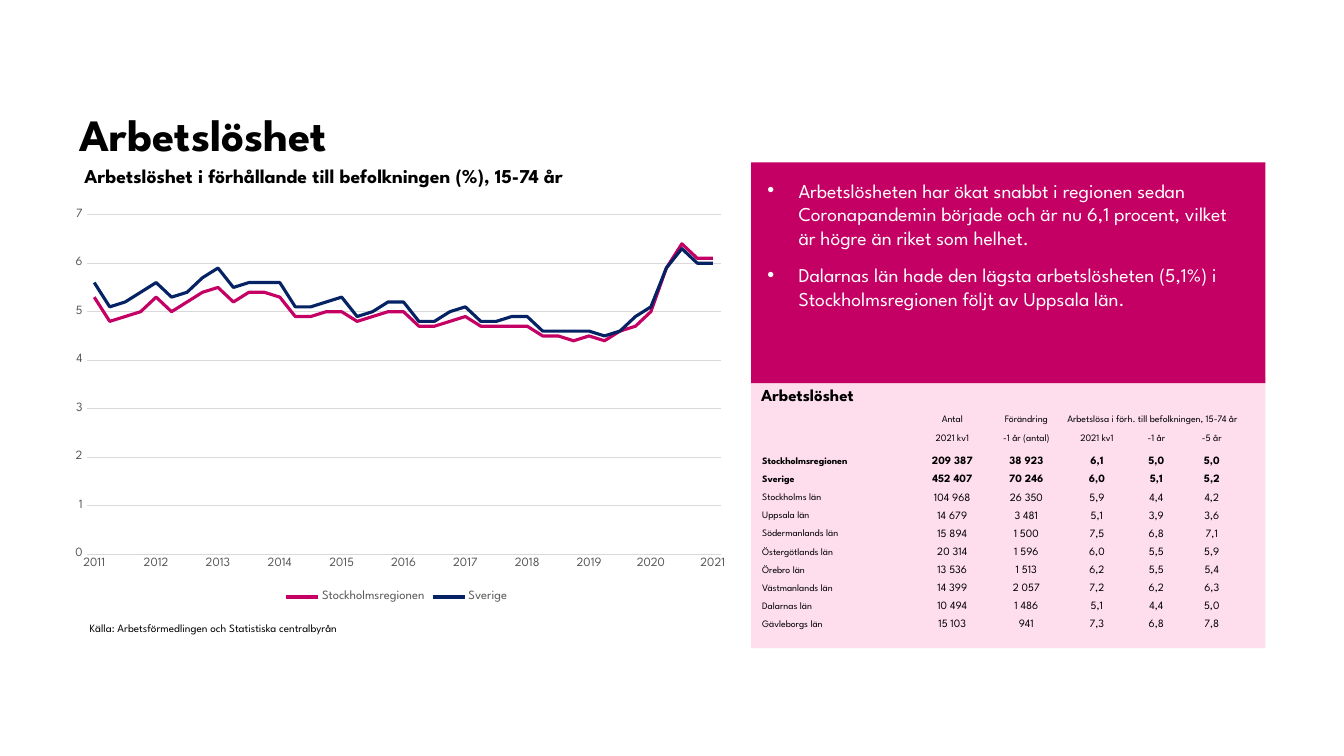
from lxml import etree
from pptx import Presentation
from pptx.chart.data import CategoryChartData
from pptx.dml.color import RGBColor
from pptx.enum.chart import XL_CHART_TYPE, XL_LEGEND_POSITION, XL_TICK_MARK
from pptx.enum.shapes import MSO_SHAPE
from pptx.enum.text import MSO_ANCHOR, MSO_AUTO_SIZE, PP_ALIGN
from pptx.oxml import parse_xml
from pptx.oxml.ns import nsdecls, qn
from pptx.util import Inches, Pt

LINE, LEGEND_BOTTOM, NO_TICK = XL_CHART_TYPE.LINE, XL_LEGEND_POSITION.BOTTOM, XL_TICK_MARK.NONE
RECTANGLE, FIXED_SIZE = MSO_SHAPE.RECTANGLE, MSO_AUTO_SIZE.NONE
TOP, MIDDLE, BOTTOM = MSO_ANCHOR.TOP, MSO_ANCHOR.MIDDLE, MSO_ANCHOR.BOTTOM
LEFT, CENTER = PP_ALIGN.LEFT, PP_ALIGN.CENTER

BLACK = RGBColor(0x00, 0x00, 0x00)
WHITE = RGBColor(0xFF, 0xFF, 0xFF)
MAGENTA = RGBColor(0xC4, 0x00, 0x64)
PINK = RGBColor(0xFE, 0xDE, 0xED)
NAVY = RGBColor(0x05, 0x23, 0x64)
GREY = RGBColor(0x59, 0x59, 0x59)
GRID_GREY = RGBColor(0xD9, 0xD9, 0xD9)
FONT = "League Spartan"
PLAIN_TABLE_STYLE = "{2D5ABB26-0587-4C30-8999-92F81FD0307C}"

BULLETS = [
    "Arbetslösheten har ökat snabbt i regionen sedan Coronapandemin började och är nu "
    "6,1 procent, vilket är högre än riket som helhet.",
    "Dalarnas län hade den lägsta arbetslösheten (5,1%) i Stockholmsregionen följt av Uppsala län.",
]
QUARTERS = [str(2011 + i // 4) if i % 4 == 0 else "" for i in range(41)]
UNEMPLOYMENT = {
    "Stockholmsregionen": (MAGENTA, [
        5.3, 4.8, 4.9, 5, 5.3, 5, 5.2, 5.4, 5.5, 5.2, 5.4, 5.4, 5.3, 4.9, 4.9, 5, 5, 4.8, 4.9, 5, 5,
        4.7, 4.7, 4.8, 4.9, 4.7, 4.7, 4.7, 4.7, 4.5, 4.5, 4.4, 4.5, 4.4, 4.6, 4.7, 5, 5.9, 6.4, 6.1, 6.1]),
    "Sverige": (NAVY, [
        5.6, 5.1, 5.2, 5.4, 5.6, 5.3, 5.4, 5.7, 5.9, 5.5, 5.6, 5.6, 5.6, 5.1, 5.1, 5.2, 5.3, 4.9, 5, 5.2, 5.2,
        4.8, 4.8, 5, 5.1, 4.8, 4.8, 4.9, 4.9, 4.6, 4.6, 4.6, 4.6, 4.5, 4.6, 4.9, 5.1, 5.9, 6.3, 6, 6]),
}
COUNTY_ROWS = [
    ["", "Antal", "Förändring", "Arbetslösa i förh. till befolkningen, 15-74 år", "", ""],
    ["", "2021 kv1", "-1 år (antal)", "2021 kv1", "-1 år", "-5 år"],
    ["Stockholmsregionen", "209 387", "38 923", "6,1", "5,0", "5,0"],
    ["Sverige", "452 407", "70 246", "6,0", "5,1", "5,2"],
    ["Stockholms län", "104 968", "26 350", "5,9", "4,4", "4,2"],
    ["Uppsala län", "14 679", "3 481", "5,1", "3,9", "3,6"],
    ["Södermanlands län", "15 894", "1 500", "7,5", "6,8", "7,1"],
    ["Östergötlands län", "20 314", "1 596", "6,0", "5,5", "5,9"],
    ["Örebro län", "13 536", "1 513", "6,2", "5,5", "5,4"],
    ["Västmanlands län", "14 399", "2 057", "7,2", "6,2", "6,3"],
    ["Dalarnas län", "10 494", "1 486", "5,1", "4,4", "5,0"],
    ["Gävleborgs län", "15 103", "941", "7,3", "6,8", "7,8"],
]
COLUMN_SHARES = [11.63, 5.18, 5.85, 4.65, 4.2, 4.05]
ROW_SHARES = [3.73] * 2 + [2.4] * 10


def set_font(font, size, color=BLACK, bold=False):
    font.name, font.size, font.bold = FONT, Pt(size), bold
    font.color.rgb = color


def set_margins(target, left, top, right, bottom):
    target.margin_left, target.margin_top = Inches(left), Inches(top)
    target.margin_right, target.margin_bottom = Inches(right), Inches(bottom)


class SlideBuilder:
    """Places styled elements; every length is a percentage of the slide's width or height."""

    def __init__(self, deck):
        self.deck = deck
        self.page = deck.slides.add_slide(deck.slide_layouts[1])

    def across(self, share):
        return round(self.deck.slide_width * share / 100)

    def down(self, share):
        return round(self.deck.slide_height * share / 100)

    def area(self, left, top, width, height):
        return self.across(left), self.down(top), self.across(width), self.down(height)

    def place(self, shape, at):
        shape.left, shape.top, shape.width, shape.height = self.area(*at)

    def title(self, text, at):
        box = self.page.shapes.title
        self.place(box, at)
        frame = box.text_frame
        frame.text, frame.vertical_anchor, frame.auto_size = text, BOTTOM, FIXED_SIZE
        set_margins(frame, 0, 0, 0, 0)
        para = frame.paragraphs[0]
        para.alignment = LEFT
        set_font(para.font, 32, bold=True)

    def panel(self, color, at):
        box = self.page.shapes.add_shape(RECTANGLE, *self.area(*at))
        box.shadow.inherit = False
        box.fill.solid()
        box.fill.fore_color.rgb = color
        box.line.fill.background()
        return box

    def bullets(self, texts, at, behind):
        """Fill the body placeholder and stack it just above the shape given as behind."""
        box = self.page.placeholders[1]
        self.place(box, at)
        behind.element.addnext(box.element)
        box.fill.solid()
        box.fill.fore_color.rgb = MAGENTA
        frame = box.text_frame
        frame.text, frame.vertical_anchor, frame.auto_size = "\n".join(texts), TOP, FIXED_SIZE
        set_margins(frame, 0.16, 0.16, 0.16, 0.16)
        for i, para in enumerate(frame.paragraphs):
            para.space_before = Pt(10 if i else 0)
            properties = para._p.get_or_add_pPr()
            properties.set("marL", str(Inches(0.31)))
            properties.set("indent", str(-Inches(0.31)))
            etree.SubElement(properties, qn("a:buFont")).set("typeface", "Arial")
            etree.SubElement(properties, qn("a:buChar")).set("char", "•")
            set_font(para.font, 14, WHITE)

    def label(self, text, size, at, bold=False, wrap=False, anchor=TOP):
        frame = self.page.shapes.add_textbox(*self.area(*at)).text_frame
        frame.text, frame.word_wrap, frame.vertical_anchor = text, wrap, anchor
        set_font(frame.paragraphs[0].font, size, bold=bold)

    def table(self, rows, left, top):
        at = self.area(left, top, sum(COLUMN_SHARES), sum(ROW_SHARES))
        holder = self.page.shapes.add_table(len(rows), len(COLUMN_SHARES), *at)
        table = holder.table
        table.first_row = table.horz_banding = False
        next(holder.element.iter(qn("a:tableStyleId"))).text = PLAIN_TABLE_STYLE
        for column, share in zip(table.columns, COLUMN_SHARES):
            column.width = self.across(share)
        for r, values in enumerate(rows):
            table.rows[r].height = self.down(ROW_SHARES[r])
            for c, value in enumerate(values):
                cell = table.cell(r, c)
                cell.text = value
                cell.fill.background()
                cell.vertical_anchor = MIDDLE if r else BOTTOM
                set_margins(cell, 0.01, 0.01, 0.01, 0)
                para = cell.text_frame.paragraphs[0]
                para.alignment = CENTER if c else LEFT
                set_font(para.font, 8 if r > 1 and c else 7, bold=r in (2, 3))
        table.cell(0, 3).merge(table.cell(0, 5))

    def line_chart(self, categories, series, at):
        data = CategoryChartData()
        data.categories = categories
        for name, (_, values) in series.items():
            data.add_series(name, values)
        chart = self.page.shapes.add_chart(LINE, *self.area(*at), data).chart
        set_font(chart.font, 10)
        chart.has_title = False
        chart.has_legend = True
        chart.legend.position, chart.legend.include_in_layout = LEGEND_BOTTOM, False
        set_font(chart.legend.font, 9, GREY)
        plot = chart.plots[0]
        plot.vary_by_categories = False
        for line, (color, _) in zip(plot.series, series.values()):
            line.smooth = False
            line.format.line.color.rgb, line.format.line.width = color, Pt(2.25)
        for axis in (chart.category_axis, chart.value_axis):
            axis.major_tick_mark = axis.minor_tick_mark = NO_TICK
            set_font(axis.tick_labels.font, 9, GREY)
        value_axis = chart.value_axis
        value_axis.minimum_scale, value_axis.maximum_scale, value_axis.major_unit = 0, 7, 1
        value_axis.tick_labels.number_format = "0"
        value_axis.tick_labels.number_format_is_linked = False
        value_axis.format.line.fill.background()
        for rule in (chart.category_axis.format.line, value_axis.major_gridlines.format.line):
            rule.color.rgb, rule.width = GRID_GREY, Pt(0.75)
        self.fix_plot_area(chart, x=0.04, y=0.03, w=0.94, h=0.84)

    def fix_plot_area(self, chart, **shares):
        """Pin the inner plot area and keep the year labels level."""
        root = chart.element
        root.xpath("//c:catAx/c:txPr/a:bodyPr")[0].set("rot", "-60000000")
        plot_area = root.xpath("//c:plotArea")[0]
        for old in plot_area.findall(qn("c:layout")):
            plot_area.remove(old)
        modes = "".join(f'<c:{key}Mode val="edge"/>' for key in "xy")
        sizes = "".join(f'<c:{key} val="{share}"/>' for key, share in shares.items())
        plot_area.insert(0, parse_xml(
            f'<c:layout {nsdecls("c")}><c:manualLayout><c:layoutTarget val="inner"/>'
            f"{modes}{sizes}</c:manualLayout></c:layout>"))


def main():
    deck = Presentation()
    deck.slide_width, deck.slide_height = Inches(13.33), Inches(7.5)
    slide = SlideBuilder(deck)
    slide.title("Arbetslöshet", (5.93, 4.93, 69.17, 16.27))
    slide.label("Källa: Arbetsförmedlingen och Statistiska centralbyrån", 8, (5.93, 81.47, 23.48, 3.2))
    table_panel = slide.panel(PINK, (55.89, 50, 38.26, 35.73))
    slide.bullets(BULLETS, (55.89, 21.47, 38.26, 29.2), behind=table_panel)
    slide.label("Arbetslöshet", 12, (55.89, 50.27, 9, 4), bold=True)
    slide.label("Arbetslöshet i förhållande till befolkningen (%), 15-74 år", 14,
                (5.55, 17.87, 43.51, 7.6), bold=True, wrap=True, anchor=BOTTOM)
    slide.table(COUNTY_ROWS, 56.64, 52.4)
    slide.line_chart(QUARTERS, UNEMPLOYMENT, (4.43, 26.8, 50.19, 53.47))
    deck.save("out.pptx")


if __name__ == "__main__":
    main()
